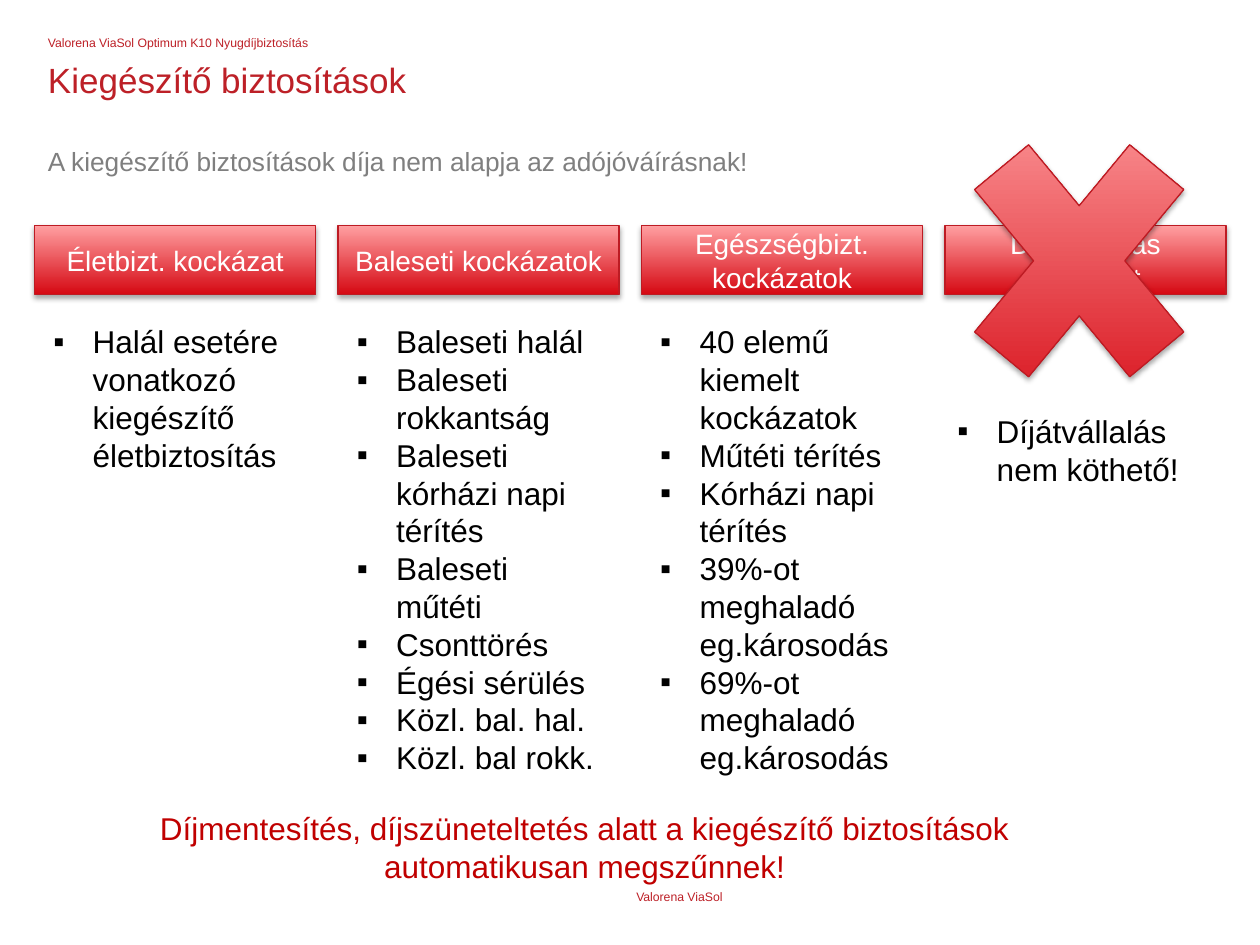
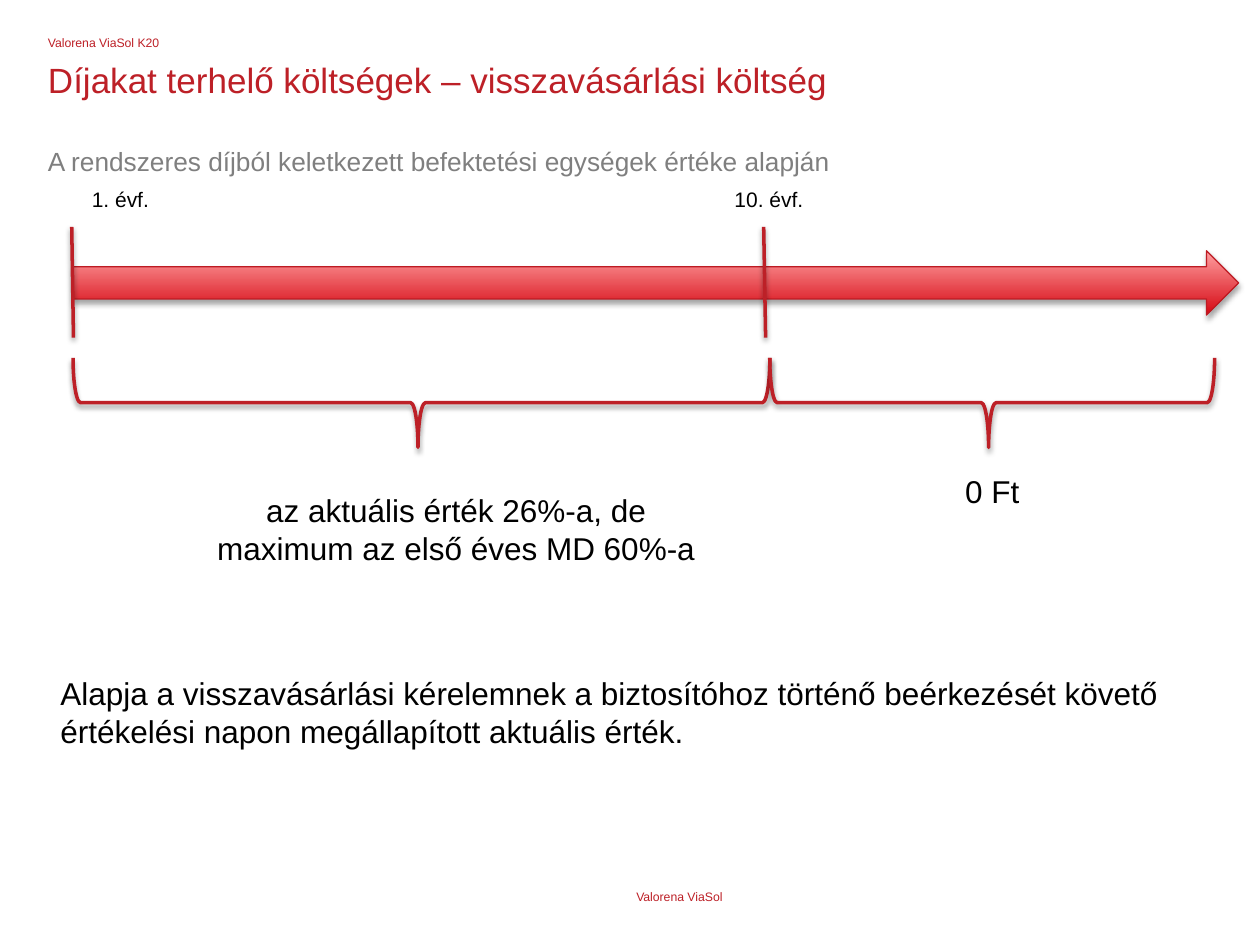
from dataclasses import dataclass

import lxml.etree
import pptx
import pptx.dml.color
import pptx.enum.shapes
import pptx.enum.text
import pptx.oxml.ns
import pptx.util

Pt = pptx.util.Pt
Shapes = pptx.enum.shapes.MSO_SHAPE
Align = pptx.enum.text.PP_ALIGN
Anchor = pptx.enum.text.MSO_ANCHOR
AutoSize = pptx.enum.text.MSO_AUTO_SIZE
qn = pptx.oxml.ns.qn

FONT = "Arial"
BRAND_RED = "BD2027"
EDGE_RED = "BD1B23"
WARNING_RED = "C00000"
GRADIENT = ("D50812", "FF9FA1")
GREY = "7F7F7F"
BLACK = "000000"
WHITE = "FFFFFF"
BRAND = "Valorena ViaSol"
MARGIN = 27.4
CARD_LEFT, CARD_PITCH, CARD_TOP = 19.8, 173.4, 128.9
CARD_WIDTH, CARD_HEIGHT = 160.6, 39.6
LIST_WIDTH, BULLET_INDENT = 153.4, 22.5


@dataclass
class Area:
    left: float
    top: float
    width: float
    height: float

    def lengths(self) -> tuple:
        return Pt(self.left), Pt(self.top), Pt(self.width), Pt(self.height)


@dataclass
class Style:
    size: float
    color: str = BLACK
    align: Align = Align.LEFT
    line_spacing: float | None = None
    bullet: bool = False


@dataclass
class Card:
    heading: str
    items: list[str]
    list_shift: float = 3.6
    list_top: float = 180.7
    list_height: float = 269.3


@dataclass
class Brace:
    area: Area
    tip: float


CARDS = [
    Card("Életbizt. kockázat",
         ["Halál esetére vonatkozó kiegészítő életbiztosítás"], list_height=94.3),
    Card("Baleseti kockázatok",
         ["Baleseti halál", "Baleseti rokkantság", "Baleseti kórházi napi térítés",
          "Baleseti műtéti", "Csonttörés", "Égési sérülés", "Közl. bal. hal.",
          "Közl. bal rokk."]),
    Card("Egészségbizt. kockázatok",
         ["40 elemű kiemelt kockázatok", "Műtéti térítés", "Kórházi napi térítés",
          "39%-ot meghaladó eg.károsodás", "69%-ot meghaladó eg.károsodás"]),
    Card("Díjátvállalás kockázat", ["Díjátvállalás nem köthető!"], 0, 231.8, 51.1),
]
BRACES = [Brace(Area(215.3, 31, 51.1, 398.2), 0.505),
          Brace(Area(541.4, 103, 51.1, 254.2), 0.508)]
BODY = Style(18)
BODY_CENTERED = Style(18, align=Align.CENTER)
LABEL = Style(12)


def rgb(color: str) -> pptx.dml.color.RGBColor:
    return pptx.dml.color.RGBColor.from_string(color)


def add_bullet(para) -> None:
    properties = para._p.get_or_add_pPr()
    properties.set("marL", str(Pt(BULLET_INDENT)))
    properties.set("indent", str(-Pt(BULLET_INDENT)))
    lxml.etree.SubElement(properties, qn("a:buFont"), typeface=FONT)
    lxml.etree.SubElement(properties, qn("a:buChar"), char="▪")


def write(frame, texts: list[str], style: Style) -> None:
    for index, text in enumerate(texts):
        para = frame.add_paragraph() if index else frame.paragraphs[0]
        para.alignment = style.align
        para.space_before = Pt(0)
        if style.line_spacing:
            para.line_spacing = Pt(style.line_spacing)
        if style.bullet:
            add_bullet(para)
        span = para.add_run()
        span.text = text
        span.font.name = FONT
        span.font.size = Pt(style.size)
        span.font.color.rgb = rgb(style.color)


def remove_insets(frame) -> None:
    frame.margin_left = frame.margin_top = frame.margin_right = frame.margin_bottom = 0


def add_text(page, area: Area, texts: list[str], style: Style,
             tight: bool = False, wrap: bool = True) -> None:
    frame = page.shapes.add_textbox(*area.lengths()).text_frame
    frame.word_wrap = wrap
    if tight:
        remove_insets(frame)
    else:
        frame.auto_size = AutoSize.SHAPE_TO_FIT_TEXT
    write(frame, texts, style)


def add_shadow(shape, opacity: int, distance: float) -> None:
    effects = lxml.etree.SubElement(shape._element.spPr, qn("a:effectLst"))
    shadow = lxml.etree.SubElement(
        effects, qn("a:outerShdw"), blurRad=str(Pt(3.1)), dist=str(Pt(distance)),
        dir="5400000", rotWithShape="0")
    color = lxml.etree.SubElement(shadow, qn("a:srgbClr"), val=BLACK)
    lxml.etree.SubElement(color, qn("a:alpha"), val=str(opacity * 1000))


def set_line(shape, color: str, width: float) -> None:
    shape.line.color.rgb = rgb(color)
    shape.line.width = Pt(width)


def add_glossy(page, kind: Shapes, area: Area):
    shape = page.shapes.add_shape(kind, *area.lengths())
    shape.fill.gradient()
    shape.fill.gradient_angle = 90
    for stop, color, position in zip(shape.fill.gradient_stops, GRADIENT, (0, 1)):
        stop.color.rgb = rgb(color)
        stop.position = position
    set_line(shape, EDGE_RED, 0.75)
    add_shadow(shape, 35, 1.8)
    return shape


def add_card(page, index: int, card: Card) -> None:
    left = CARD_LEFT + index * CARD_PITCH
    box = add_glossy(page, Shapes.RECTANGLE, Area(left, CARD_TOP, CARD_WIDTH, CARD_HEIGHT))
    box.text_frame.word_wrap = True
    box.text_frame.vertical_anchor = Anchor.MIDDLE
    write(box.text_frame, [card.heading], Style(16, WHITE, Align.CENTER))
    add_text(page, Area(left + card.list_shift, card.list_top, LIST_WIDTH, card.list_height),
             card.items, Style(18, bullet=True))


def add_tick(page, top_x: float, bottom_x: float) -> None:
    tick = page.shapes.add_connector(
        pptx.enum.shapes.MSO_CONNECTOR.STRAIGHT,
        Pt(top_x), Pt(129.6), Pt(bottom_x), Pt(193))
    set_line(tick, BRAND_RED, 2)
    add_shadow(tick, 38, 1.6)


def add_brace(page, brace: Brace) -> None:
    shape = page.shapes.add_shape(Shapes.RIGHT_BRACE, *brace.area.lengths())
    shape.rotation = 90
    shape.adjustments[0] = 0.083
    shape.adjustments[1] = brace.tip
    shape.fill.background()
    set_line(shape, BRAND_RED, 2)
    add_shadow(shape, 38, 1.6)


def add_page(deck, product: str, title: str, subtitle: str):
    page = deck.slides.add_slide(deck.slide_layouts[5])
    heading = page.shapes.title
    heading.left, heading.top, heading.width, heading.height = Area(
        MARGIN, 35.3, 660.2, 43.9).lengths()
    frame = heading.text_frame
    frame.auto_size = AutoSize.NONE
    frame.word_wrap = True
    frame.vertical_anchor = Anchor.TOP
    remove_insets(frame)
    write(frame, [title], Style(20, BRAND_RED, line_spacing=22))
    add_text(page, Area(MARGIN, 84.2, 660.2, 36), [subtitle],
             Style(15, GREY, line_spacing=17), tight=True)
    add_text(page, Area(MARGIN, 21.6, 175, 9.4), [product],
             Style(7, BRAND_RED, line_spacing=7), tight=True)
    add_text(page, Area(363.6, 508.3, 228.2, 8.6), [BRAND],
             Style(7, BRAND_RED), tight=True)
    return page


def build_riders(deck) -> None:
    page = add_page(deck, f"{BRAND} Optimum K10 Nyugdíjbiztosítás",
                    "Kiegészítő biztosítások",
                    "A kiegészítő biztosítások díja nem alapja az adójóváírásnak!")
    for index, card in enumerate(CARDS):
        add_card(page, index, card)
    add_text(page, Area(37.4, 458.6, 593.3, 51.1),
             ["Díjmentesítés, díjszüneteltetés alatt a kiegészítő biztosítások "
              "automatikusan megszűnnek!"],
             Style(18, WARNING_RED, Align.CENTER))
    add_glossy(page, Shapes.MATH_MULTIPLY, Area(531.4, 46.1, 170.6, 205.9))


def build_surrender_cost(deck) -> None:
    page = add_page(deck, f"{BRAND} K20",
                    "Díjakat terhelő költségek – visszavásárlási költség",
                    "A rendszeres díjból keletkezett befektetési egységek értéke alapján")
    add_glossy(page, Shapes.RIGHT_ARROW, Area(41.8, 143.3, 666, 36.7))
    add_text(page, Area(45.4, 103, 47.5, 21.6), ["1. évf."], LABEL, wrap=False)
    add_text(page, Area(412.6, 103, 54, 21.6), ["10. évf."], LABEL, wrap=False)
    add_tick(page, 41, 42)
    add_tick(page, 436.4, 437.5)
    for brace in BRACES:
        add_brace(page, brace)
    add_text(page, Area(108.7, 277.2, 303.8, 51.1),
             ["az aktuális érték 26%-a, de maximum az első éves MD 60%-a"], BODY_CENTERED)
    add_text(page, Area(450, 266.4, 234, 28.8), ["0 Ft"], BODY_CENTERED)
    add_text(page, Area(MARGIN, 381.6, 642.2, 51.1),
             ["Alapja a visszavásárlási kérelemnek a biztosítóhoz történő beérkezését "
              "követő értékelési napon megállapított aktuális érték."], BODY)


def main() -> None:
    deck = pptx.Presentation()
    deck.slide_width, deck.slide_height = Pt(720), Pt(540)
    build_riders(deck)
    build_surrender_cost(deck)
    deck.save("out.pptx")


if __name__ == "__main__":
    main()
